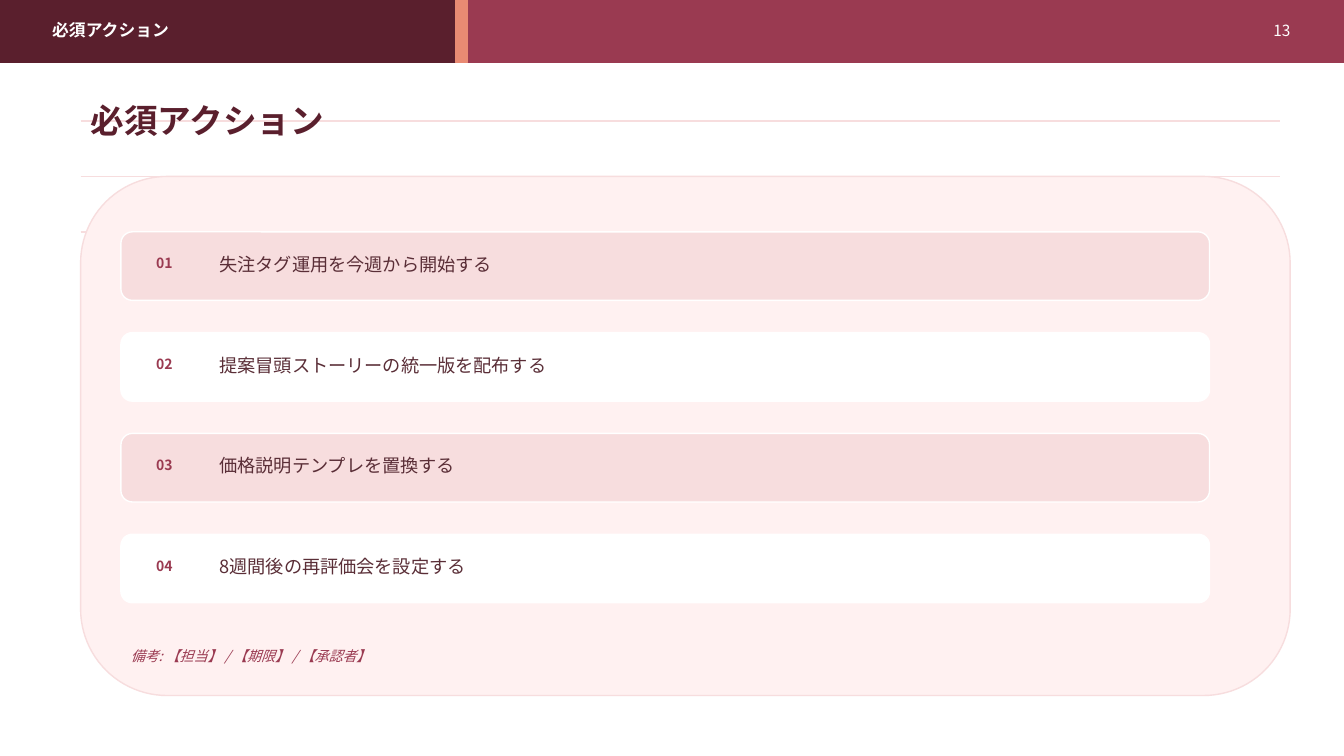
from lxml.etree import SubElement
from pptx import Presentation
from pptx.dml.color import RGBColor
from pptx.enum.lang import MSO_LANGUAGE_ID
from pptx.enum.shapes import MSO_CONNECTOR, MSO_SHAPE
from pptx.enum.text import MSO_ANCHOR, PP_ALIGN
from pptx.oxml.ns import qn
from pptx.util import Pt

SANS = "Noto Sans CJK JP"
HEAD = "League Spartan"
WINE = "5A1F2D"
ROSE = "9A3A51"
CORAL = "E98A73"
PINK = "F7DDDE"
PALE = "FFF1F1"
WHITE = "FFFFFF"
INK = "5A2E37"

TITLE = "必須アクション"
TASKS = [
    "失注タグ運用を今週から開始する",
    "提案冒頭ストーリーの統一版を配布する",
    "価格説明テンプレを置換する",
    "8週間後の再評価会を設定する",
]


def color(code):
    return RGBColor.from_string(code)


def add_rule(slide, left, right, top):
    rule = slide.shapes.add_connector(
        MSO_CONNECTOR.STRAIGHT, Pt(left), Pt(top), Pt(right), Pt(top))
    rule.line.color.rgb = color(PINK)
    rule.line.width = Pt(1)
    SubElement(rule._element.spPr, qn("a:effectLst"))


def add_box(slide, kind, left, top, width, height, fill, edge):
    box = slide.shapes.add_shape(
        kind, Pt(left), Pt(top), Pt(width), Pt(height))
    box.shadow.inherit = False
    box.fill.solid()
    box.fill.fore_color.rgb = color(fill)
    box.line.color.rgb = color(edge)
    box.line.width = Pt(1)


def add_text(slide, text, left, top, width, height, size, tint,
             face=SANS, bold=False, italic=False, align=PP_ALIGN.LEFT):
    frame = slide.shapes.add_textbox(
        Pt(left), Pt(top), Pt(width), Pt(height)).text_frame
    frame.word_wrap = True
    frame.vertical_anchor = MSO_ANCHOR.MIDDLE
    para = frame.paragraphs[0]
    para.alignment = align
    run = para.add_run()
    run.text = text
    font = run.font
    font.size = Pt(size)
    font.bold = bold
    font.italic = italic
    font.color.rgb = color(tint)
    font.language_id = MSO_LANGUAGE_ID.JAPANESE
    font.name = face
    SubElement(font._element, qn("a:ea"), typeface=face)


def add_header(slide):
    bars = [(0, 960, ROSE), (0, 331.2, WINE), (325.44, 8.64, CORAL)]
    for left, width, fill in bars:
        add_box(slide, MSO_SHAPE.RECTANGLE,
                left, 0, width, 44.64, fill, fill)
    add_text(slide, TITLE, 30.24, 12.24, 633.6, 18.72, 12, WHITE, bold=True)
    add_text(slide, "13", 874.8, 12.24, 54, 18.72, 11, WHITE,
             align=PP_ALIGN.RIGHT)


def add_task(slide, index, task):
    top = 165.6 + 72 * index
    fill = WHITE if index % 2 else PINK
    add_box(slide, MSO_SHAPE.ROUNDED_RECTANGLE,
            86.4, top, 777.6, 48.96, fill, WHITE)
    add_text(slide, f"{index + 1:02}", 104.4, top + 15.12, 31.68, 14.4,
             10, ROSE, bold=True)
    add_text(slide, task, 149.76, top + 14.4, 691.2, 17.28, 13, INK)


def main():
    deck = Presentation()
    deck.slide_width = Pt(960)
    deck.slide_height = Pt(540)
    slide = deck.slides.add_slide(deck.slide_layouts[6])
    for step in range(3):
        add_rule(slide, 57.6, 914.4, 86.4 + 39.6 * step)
    add_header(slide)
    add_text(slide, TITLE, 57.6, 68.4, 820.8, 34.56, 24, WINE,
             face=HEAD, bold=True)
    add_box(slide, MSO_SHAPE.ROUNDED_RECTANGLE,
            57.6, 126, 864, 370.8, PALE, PINK)
    for index, task in enumerate(TASKS):
        add_task(slide, index, task)
    add_text(slide, "備考: 【担当】 / 【期限】 / 【承認者】",
             86.4, 460.8, 489.6, 15.84, 10, ROSE, italic=True)
    deck.save("out.pptx")


if __name__ == "__main__":
    main()
